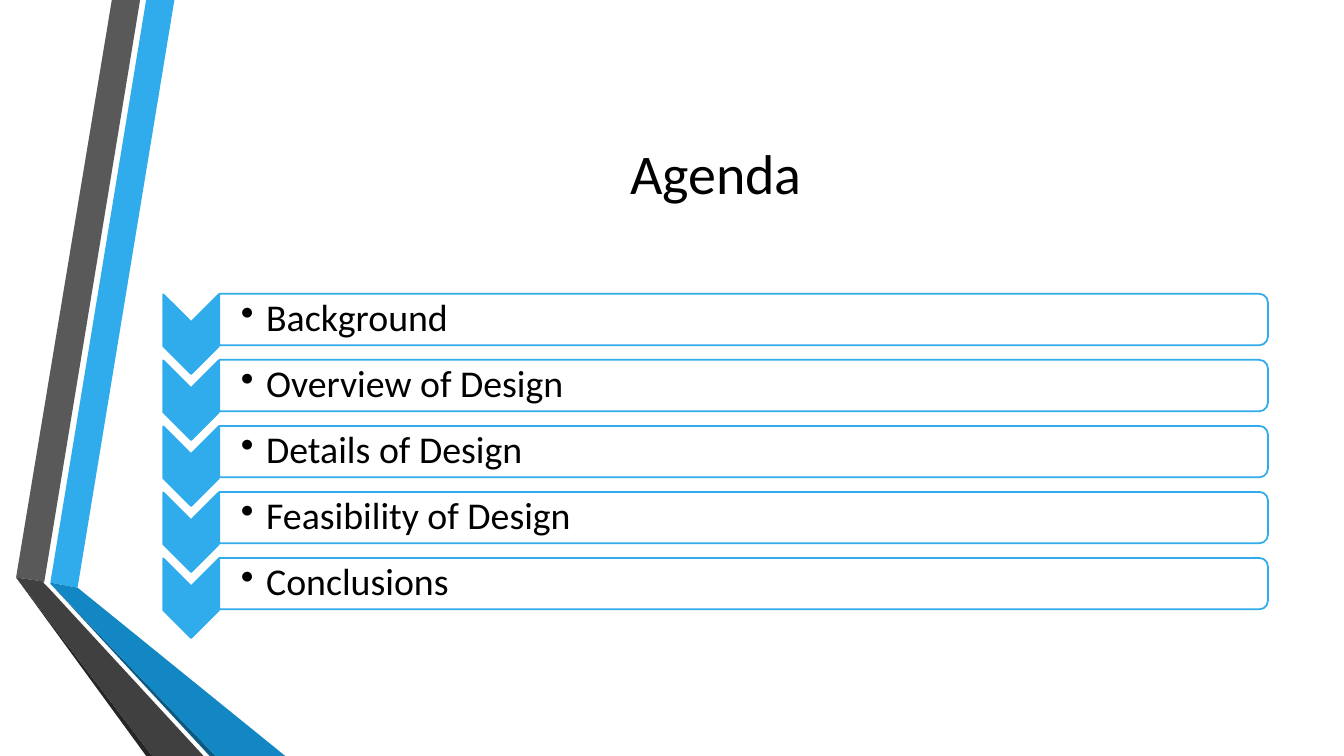
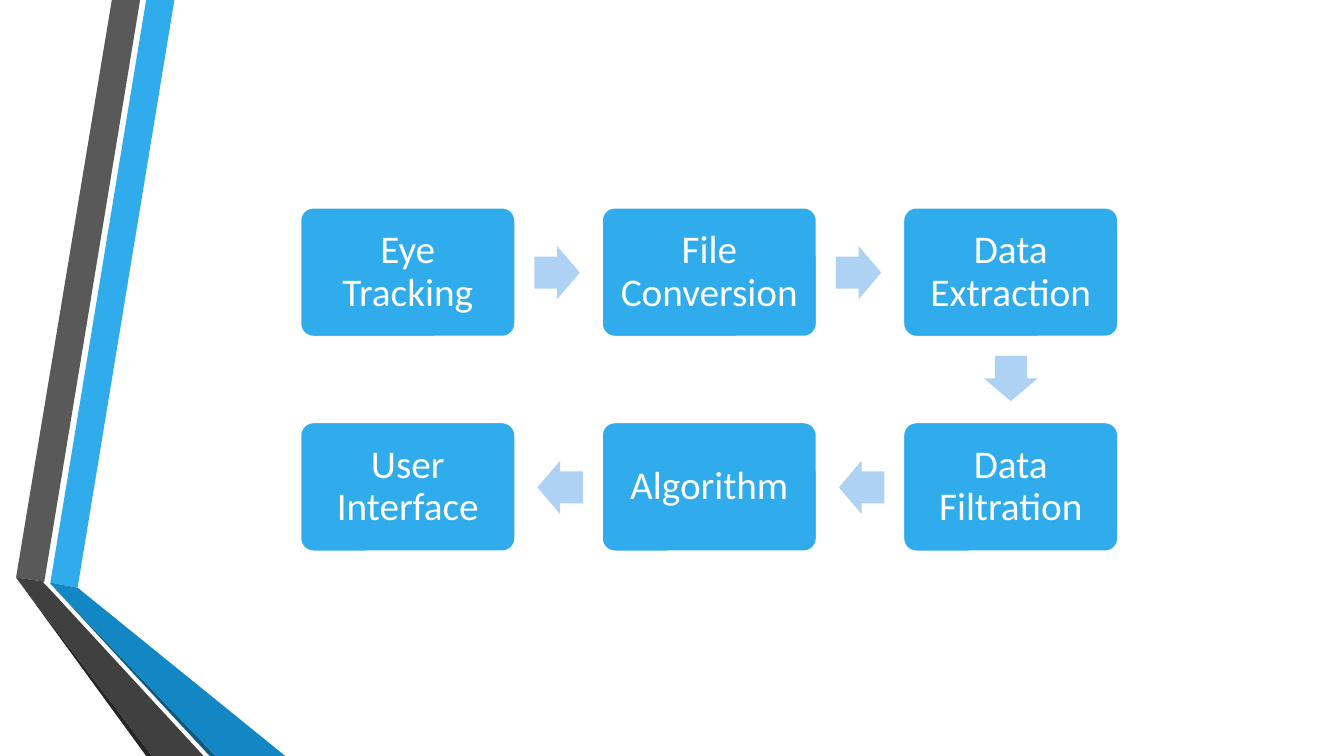
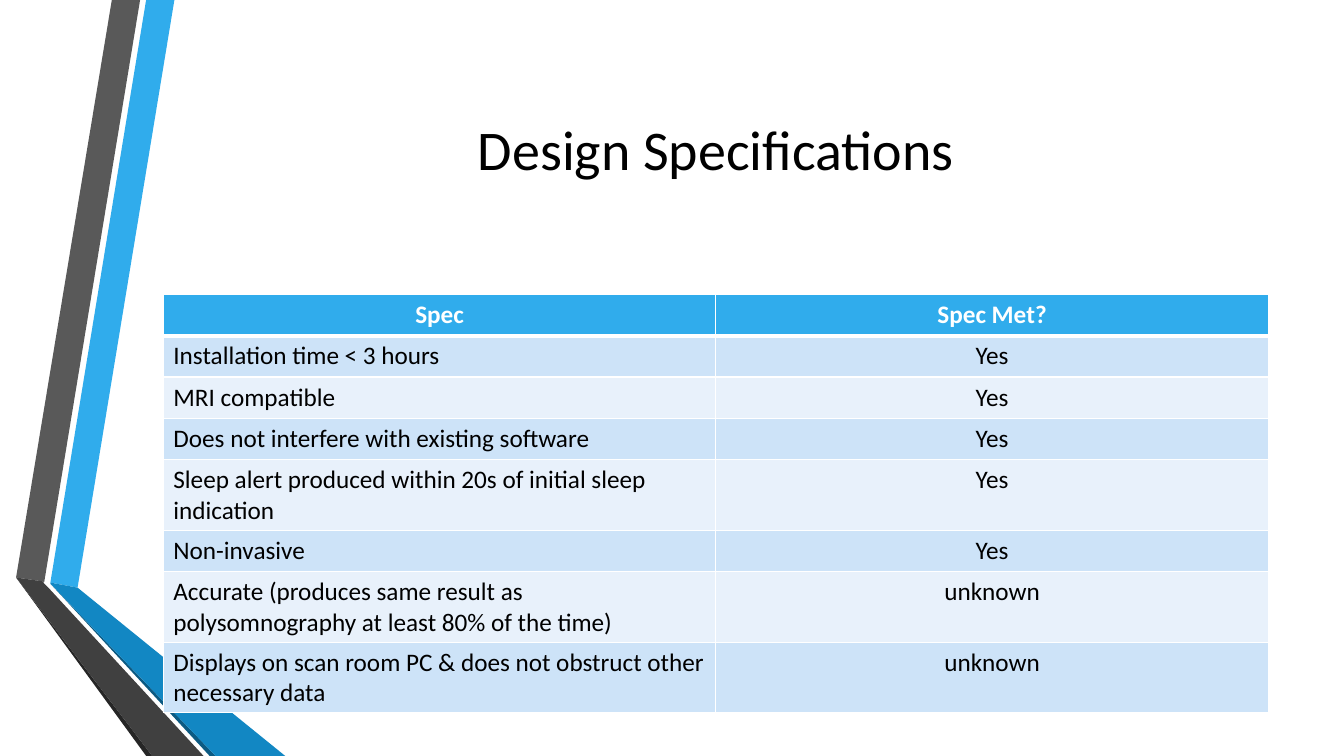
from dataclasses import dataclass

from lxml.etree import SubElement
from pptx import Presentation
from pptx.dml.color import RGBColor
from pptx.enum.shapes import MSO_SHAPE
from pptx.enum.text import MSO_ANCHOR, PP_ALIGN
from pptx.oxml.ns import qn
from pptx.shapes.autoshape import Shape
from pptx.slide import Slide
from pptx.table import _Cell
from pptx.text.text import TextFrame
from pptx.util import Inches, Pt

FONT = "Calibri"
COLORS = {
    "blue": "30ACEC",
    "mid_blue": "1287C3",
    "deep_blue": "0C5A82",
    "pale_blue": "AED2F4",
    "row_dark": "CDE3F8",
    "row_light": "E8F1FB",
    "gray": "595959",
    "dark_gray": "404040",
    "charcoal": "262626",
    "white": "FFFFFF",
    "black": "000000",
}
LEFT, WIDTH = 1.62, 10.96


@dataclass(frozen=True)
class Band:
    color: str
    points: tuple[tuple[float, float], ...]


@dataclass(frozen=True)
class Step:
    text: str
    col: int
    row: int


@dataclass(frozen=True)
class Arrow:
    left: float
    top: float
    rotation: int


@dataclass(frozen=True)
class Requirement:
    text: str
    met: str


BANDS = (
    Band("blue", ((0.5, 5.78), (0.77, 5.83), (1.73, 0), (1.45, 0))),
    Band("gray", ((1.39, 0), (1.11, 0), (0.16, 5.73), (0.44, 5.77))),
    Band("charcoal", ((0.16, 5.73), (1.45, 7.5), (1.51, 7.5))),
    Band("deep_blue", ((0.5, 5.79), (2.08, 7.5), (2.14, 7.5))),
    Band("mid_blue", ((0.5, 5.79), (2.14, 7.5), (2.83, 7.5), (0.77, 5.83), (0.5, 5.78))),
    Band("dark_gray", ((2.02, 7.5), (0.48, 5.83), (0.43, 5.78), (0.44, 5.77),
                       (0.16, 5.73), (1.51, 7.5))),
)
TOPICS = ("Background", "Overview of Design", "Details of Design",
          "Feasibility of Design", "Conclusions")
STEPS = (
    Step("Eye Tracking", 0, 0),
    Step("File Conversion", 1, 0),
    Step("Data Extraction", 2, 0),
    Step("Data Filtration", 2, 1),
    Step("Algorithm", 1, 1),
    Step("User Interface", 0, 1),
)
ARROWS = (
    Arrow(5.3, 2.44, 0),
    Arrow(8.29, 2.44, 0),
    Arrow(9.8, 3.49, 90),
    Arrow(8.32, 4.57, 180),
    Arrow(5.33, 4.57, 180),
)
REQUIREMENTS = (
    Requirement("Installation time < 3 hours", "Yes"),
    Requirement("MRI compatible", "Yes"),
    Requirement("Does not interfere with existing software", "Yes"),
    Requirement("Sleep alert produced within 20s of initial sleep indication", "Yes"),
    Requirement("Non-invasive", "Yes"),
    Requirement("Accurate (produces same result as polysomnography at least 80% of the time)",
                "unknown"),
    Requirement("Displays on scan room PC & does not obstruct other necessary data", "unknown"),
)


def rgb(name: str) -> RGBColor:
    return RGBColor.from_string(COLORS[name])


def paint(sp: Shape, fill: str, line: str | None = None) -> None:
    sp.shadow.inherit = False
    sp.fill.solid()
    sp.fill.fore_color.rgb = rgb(fill)
    if line:
        sp.line.color.rgb = rgb(line)
        sp.line.width = Pt(1.25)
    else:
        sp.line.fill.background()


def add_shape(s: Slide, kind: MSO_SHAPE, left: float, top: float, width: float, height: float,
              fill: str, line: str | None = None, rotation: int = 0) -> Shape:
    sp = s.shapes.add_shape(kind, Inches(left), Inches(top), Inches(width), Inches(height))
    sp.rotation = rotation
    paint(sp, fill, line)
    return sp


def write(tf: TextFrame, text: str, size: int, color: str = "black",
          align: PP_ALIGN = PP_ALIGN.CENTER, bold: bool = False, spacing: float = 1.0) -> None:
    tf.word_wrap = True
    tf.text = text
    p = tf.paragraphs[0]
    p.alignment = align
    p.line_spacing = spacing
    r = p.runs[0]
    r.font.name = FONT
    r.font.size = Pt(size)
    r.font.bold = bold
    r.font.color.rgb = rgb(color)


def set_margins(tf: TextFrame, left: float, others: float) -> None:
    tf.vertical_anchor = MSO_ANCHOR.MIDDLE
    tf.margin_left = Inches(left)
    tf.margin_top = tf.margin_right = tf.margin_bottom = Inches(others)


def add_slide(prs: Presentation) -> Slide:
    s = prs.slides.add_slide(prs.slide_layouts[6])
    for band in BANDS:
        start, *rest = [(Inches(x), Inches(y)) for x, y in band.points]
        builder = s.shapes.build_freeform(*start)
        builder.add_line_segments(rest, close=True)
        paint(builder.convert_to_shape(), band.color)
    return s


def add_title(s: Slide, text: str, top: float) -> None:
    tf = s.shapes.add_textbox(Inches(LEFT), Inches(top), Inches(WIDTH), Inches(1.92)).text_frame
    tf.vertical_anchor = MSO_ANCHOR.MIDDLE
    write(tf, text, 40)


def add_topic(s: Slide, text: str, top: float) -> None:
    add_shape(s, MSO_SHAPE.CHEVRON, 1.5, top + 0.12, 0.79, 0.55, "blue", "blue", 90)
    bar = add_shape(s, MSO_SHAPE.ROUND_2_SAME_RECTANGLE, 7.12, top - 4.95, 0.51, 10.4,
                    "white", "blue", 90)
    white = bar.fill._xPr.find(qn("a:solidFill"))[0]
    SubElement(white, qn("a:alpha"), val="90000")
    tf = s.shapes.add_textbox(Inches(2.18), Inches(top + 0.02), Inches(10.38),
                              Inches(0.46)).text_frame
    set_margins(tf, 0.21, 0.02)
    write(tf, text, 27, align=PP_ALIGN.LEFT, spacing=0.9)
    pPr = tf.paragraphs[0]._p.get_or_add_pPr()
    pPr.set("marL", str(Inches(0.25)))
    pPr.set("indent", str(-Inches(0.25)))
    SubElement(pPr, qn("a:buChar"), char="•")


def add_step(s: Slide, step: Step) -> None:
    sp = add_shape(s, MSO_SHAPE.ROUNDED_RECTANGLE, 2.98 + 2.99 * step.col,
                   2.06 + 2.13 * step.row, 2.13, 1.28, "blue", "white")
    sp.adjustments[0] = 0.1
    set_margins(sp.text_frame, 0.12, 0.12)
    write(sp.text_frame, step.text, 28, "white", spacing=0.9)


def add_arrow(s: Slide, arrow: Arrow) -> None:
    sp = add_shape(s, MSO_SHAPE.RIGHT_ARROW, arrow.left, arrow.top, 0.45, 0.53,
                   "pale_blue", rotation=arrow.rotation)
    sp.adjustments[0] = 0.6
    sp.adjustments[1] = 0.5


def style_cell(cell: _Cell, fill: str, top: float, bottom: float) -> None:
    tcPr = cell._tc.get_or_add_tcPr()
    for side, width in (("L", 1), ("R", 1), ("T", top), ("B", bottom)):
        ln = SubElement(tcPr, qn(f"a:ln{side}"), w=str(Pt(width)))
        SubElement(SubElement(ln, qn("a:solidFill")), qn("a:srgbClr"), val=COLORS["white"])
    cell.fill.solid()
    cell.fill.fore_color.rgb = rgb(fill)


def add_requirements(s: Slide) -> None:
    rows = (Requirement("Spec", "Spec Met?"), *REQUIREMENTS)
    row_height = Inches(0.41)
    table = s.shapes.add_table(len(rows), 2, Inches(LEFT), Inches(2.92), Inches(WIDTH),
                               row_height * len(rows)).table
    for i, row in enumerate(rows):
        table.rows[i].height = row_height
        header = i == 0
        fill = "blue" if header else "row_dark" if i % 2 else "row_light"
        for j, text in enumerate((row.text, row.met)):
            cell = table.cell(i, j)
            style_cell(cell, fill, 3 if i == 1 else 1, 3 if header else 1)
            align = PP_ALIGN.CENTER if header or j else PP_ALIGN.LEFT
            write(cell.text_frame, text, 18, "white" if header else "black", align, header)


def main() -> None:
    prs = Presentation()
    prs.slide_width = Inches(13.33)
    prs.slide_height = Inches(7.5)

    s = add_slide(prs)
    add_title(s, "Agenda", 0.75)
    pitch = 2.62 / (len(TOPICS) - 1)
    for i, topic in enumerate(TOPICS):
        add_topic(s, topic, 2.92 + i * pitch)

    s = add_slide(prs)
    for step in STEPS:
        add_step(s, step)
    for arrow in ARROWS:
        add_arrow(s, arrow)

    s = add_slide(prs)
    add_title(s, "Design Specifications", 0.51)
    add_requirements(s)

    prs.save("out.pptx")


if __name__ == "__main__":
    main()
